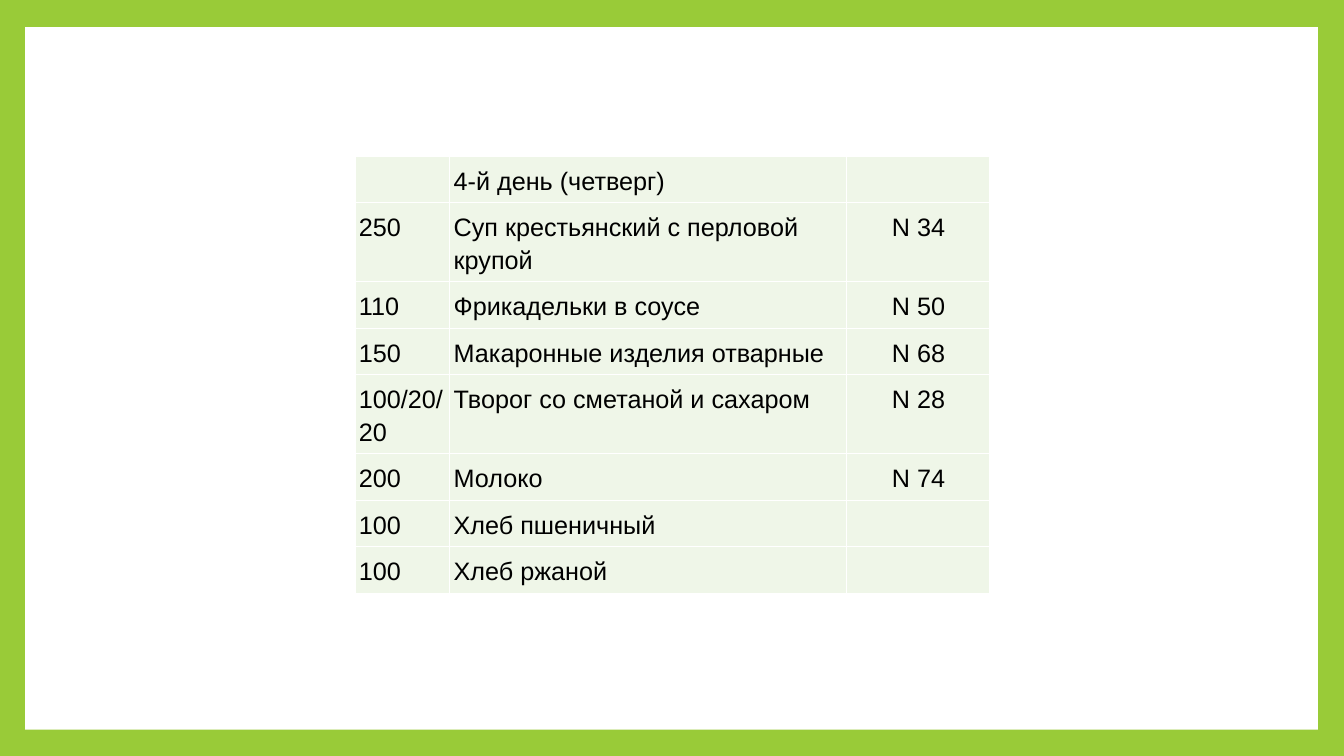
"""Build the Thursday menu slide: a bordered white panel with a table of dishes."""
from lxml.etree import SubElement
from pptx import Presentation
from pptx.dml.color import RGBColor as Color
from pptx.enum.shapes import MSO_SHAPE as Shape
from pptx.enum.text import PP_ALIGN as Align
from pptx.oxml.ns import qn
from pptx.util import Inches, Pt

MENU = [
    ("", "4-й день (четверг)", ""),
    ("250", "Суп крестьянский с перловой крупой", "N 34"),
    ("110", "Фрикадельки в соусе", "N 50"),
    ("150", "Макаронные изделия отварные", "N 68"),
    ("100/20/20", "Творог со сметаной и сахаром", "N 28"),
    ("200", "Молоко", "N 74"),
    ("100", "Хлеб пшеничный", ""),
    ("100", "Хлеб ржаной", ""),
]
TWO_LINE_ROWS = {1, 4}
ROW_HEIGHT, TWO_LINE_HEIGHT = 0.46, 0.78
COLUMNS = [(0.94, Align.LEFT), (3.94, Align.LEFT), (1.42, Align.CENTER)]
PANEL = (0.25, 0.27, 12.82, 6.97)
TABLE_LEFT, TABLE_TOP = 3.52, 1.55

THEME = {"frame": "99CB38", "panel": "FFFFFF", "cell": "EFF6E8", "border": "FFFFFF",
         "text": "000000", "font": "Arial", "size": 18, "border_width": 1}
CELL_FORMAT = {"margin_left": Inches(0.04), "margin_right": Inches(0.04),
               "margin_top": Inches(0.07), "margin_bottom": Inches(0.07)}
PARA_FORMAT = {"line_spacing": 1.15, "space_after": Pt(10)}
FONT_FORMAT = {"name": THEME["font"], "size": Pt(THEME["size"])}


def apply_format(target, values):
    for name, value in values.items():
        setattr(target, name, value)


def paint(fill, role):
    fill.solid()
    fill.fore_color.rgb = Color.from_string(THEME[role])


def add_borders(cell):
    properties = cell._tc.get_or_add_tcPr()
    for index, side in enumerate(("lnL", "lnR", "lnT", "lnB")):
        line = properties.makeelement(qn(f"a:{side}"), {"w": str(Pt(THEME["border_width"]))})
        solid = SubElement(line, qn("a:solidFill"))
        SubElement(solid, qn("a:srgbClr"), val=THEME["border"])
        properties.insert(index, line)


def fill_cell(cell, text, alignment):
    apply_format(cell, CELL_FORMAT)
    paint(cell.fill, "cell")
    add_borders(cell)
    para = cell.text_frame.paragraphs[0]
    apply_format(para, {**PARA_FORMAT, "alignment": alignment})
    if text:
        span = para.add_run()
        span.text = text
        apply_format(span.font, FONT_FORMAT)
        span.font.color.rgb = Color.from_string(THEME["text"])


def add_panel(page):
    panel = page.shapes.add_shape(Shape.RECTANGLE, *map(Inches, PANEL))
    panel.shadow.inherit = False
    paint(panel.fill, "panel")
    panel.line.fill.background()


def add_menu(page):
    heights = [TWO_LINE_HEIGHT if row in TWO_LINE_ROWS else ROW_HEIGHT
               for row in range(len(MENU))]
    width = sum(column for column, _ in COLUMNS)
    table = page.shapes.add_table(
        len(MENU), len(COLUMNS), Inches(TABLE_LEFT), Inches(TABLE_TOP),
        Inches(width), Inches(sum(heights))).table
    apply_format(table, {"first_row": False, "horz_banding": False})
    for column, (column_width, _) in zip(table.columns, COLUMNS):
        column.width = Inches(column_width)
    for row, height, texts in zip(table.rows, heights, MENU):
        row.height = Inches(height)
        for cell, text, (_, alignment) in zip(row.cells, texts, COLUMNS):
            fill_cell(cell, text, alignment)


def main():
    deck = Presentation()
    apply_format(deck, {"slide_width": Inches(13.33), "slide_height": Inches(7.5)})
    page = deck.slides.add_slide(deck.slide_layouts.get_by_name("Blank"))
    paint(page.background.fill, "frame")
    add_panel(page)
    add_menu(page)
    deck.save("out.pptx")


if __name__ == "__main__":
    main()
